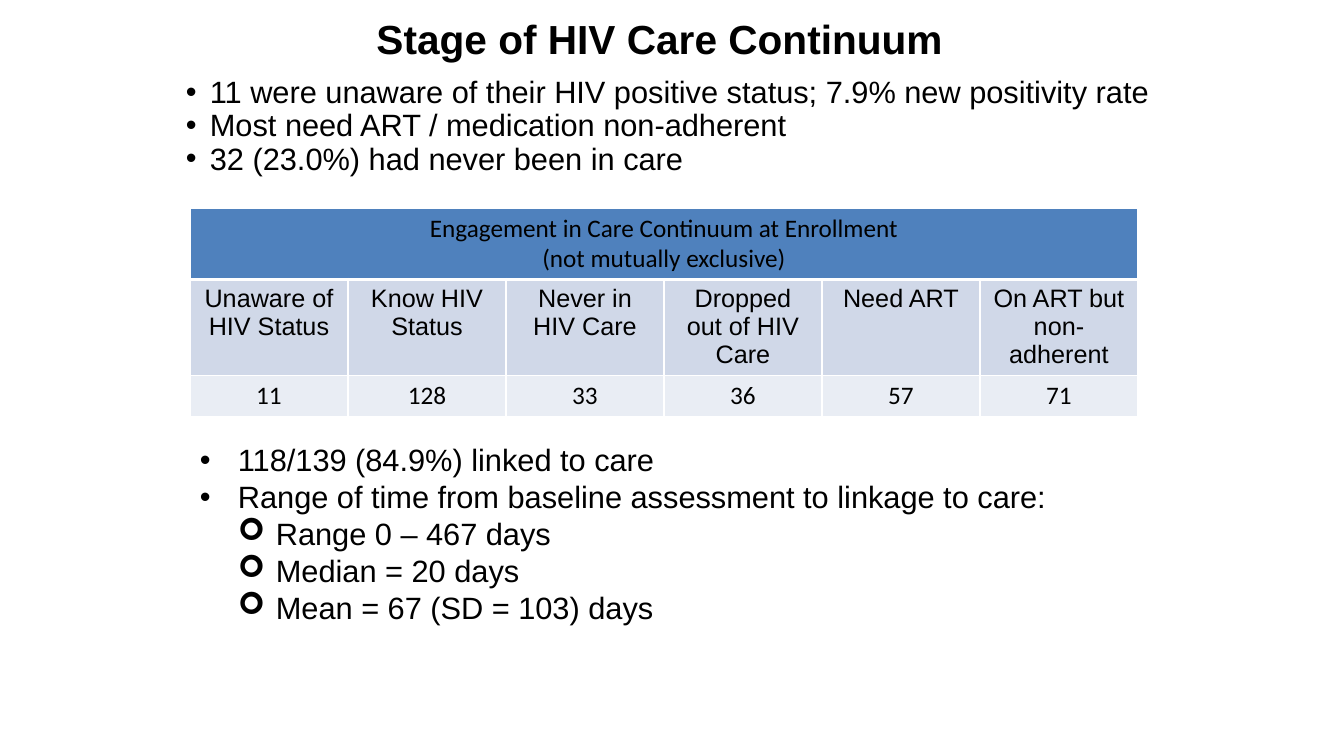
from lxml import etree
from pptx import Presentation
from pptx.dml.color import RGBColor
from pptx.enum.text import MSO_ANCHOR as Anchor, MSO_AUTO_SIZE as AutoSize, PP_ALIGN as Align
from pptx.oxml.ns import qn
from pptx.util import Pt

PX = 914400 / 100.8
BLACK = RGBColor(0x00, 0x00, 0x00)
WHITE = RGBColor(0xFF, 0xFF, 0xFF)
HEADER_BLUE = RGBColor(0x4F, 0x81, 0xBD)
LABEL_BLUE = RGBColor(0xD0, 0xD8, 0xE8)
COUNT_BLUE = RGBColor(0xE9, 0xED, 0xF4)

FINDINGS = [
    "11 were unaware of their HIV positive status; 7.9% new positivity rate",
    "Most need ART / medication non-adherent",
    "32 (23.0%) had never been in care",
]
LINKAGE = [
    "118/139 (84.9%) linked to care",
    "Range of time from baseline assessment to linkage to care:",
]
LINKAGE_TIMES = ["Range 0 – 467 days", "Median = 20 days", "Mean = 67 (SD = 103) days"]
TABLE_TITLE = ["Engagement in Care Continuum at Enrollment", "(not mutually exclusive)"]
STAGES = {
    "Unaware of HIV Status": 11,
    "Know HIV Status": 128,
    "Never in HIV Care": 33,
    "Dropped out of HIV Care": 36,
    "Need ART": 57,
    "On ART but non-adherent": 71,
}


def px(length):
    return round(length * PX)


def add_bullet(paragraph, symbol, font, indent, hang):
    props = paragraph._p.get_or_add_pPr()
    props.set("marL", str(px(indent)))
    props.set("indent", str(px(-hang)))
    etree.SubElement(props, qn("a:buFont")).set("typeface", font)
    etree.SubElement(props, qn("a:buChar")).set("char", symbol)


def write(frame, lines, size=22, font="Arial", bold=False, align=Align.LEFT,
          spacing=None, level=0, bullet=None):
    """Append lines to a frame, starting with its first paragraph if still empty."""
    for line in lines:
        first = frame.paragraphs[0]
        paragraph = frame.add_paragraph() if first.runs else first
        paragraph.level = level
        paragraph.alignment = align
        if spacing:
            paragraph.line_spacing = spacing
        if bullet:
            add_bullet(paragraph, *bullet)
        run = paragraph.add_run()
        run.text = line
        run.font.size = Pt(size)
        run.font.name = font
        run.font.bold = bold
        run.font.color.rgb = BLACK


def set_borders(cell, top=1, bottom=1):
    """Draw white cell borders; top and bottom widths are in points."""
    props = cell._tc.get_or_add_tcPr()
    widths = {"a:lnL": 1, "a:lnR": 1, "a:lnT": top, "a:lnB": bottom}
    for position, (tag, width) in enumerate(widths.items()):
        line = etree.Element(qn(tag), w=str(Pt(width)))
        fill = etree.SubElement(line, qn("a:solidFill"))
        etree.SubElement(fill, qn("a:srgbClr")).set("val", str(WHITE))
        props.insert(position, line)


class CareSlide:
    def __init__(self):
        self.deck = Presentation()
        self.deck.slide_width = px(1344)
        self.deck.slide_height = px(756)
        self.slide = self.deck.slides.add_slide(self.deck.slide_layouts[6])

    def text_area(self, left, top, width, height, anchor=Anchor.TOP):
        box = self.slide.shapes.add_textbox(px(left), px(top), px(width), px(height))
        frame = box.text_frame
        frame.word_wrap = True
        frame.auto_size = AutoSize.NONE
        frame.vertical_anchor = anchor
        return frame

    def stage_table(self, left, top, column_width, row_heights):
        columns = len(STAGES)
        table = self.slide.shapes.add_table(
            len(row_heights), columns, px(left), px(top),
            px(column_width * columns), px(sum(row_heights))).table
        table.first_row = table.horz_banding = False
        for column in table.columns:
            column.width = px(column_width)
        for row, height in zip(table.rows, row_heights):
            row.height = px(height)

        fills = [HEADER_BLUE, LABEL_BLUE, COUNT_BLUE]
        for row, fill in enumerate(fills):
            for column in range(columns):
                cell = table.cell(row, column)
                cell.fill.solid()
                cell.fill.fore_color.rgb = fill
                set_borders(cell, top=3 if row == 1 else 1, bottom=3 if row == 0 else 1)

        heading = table.cell(0, 0)
        heading.merge(table.cell(0, columns - 1))
        style = {"size": 18, "align": Align.CENTER}
        write(heading.text_frame, TABLE_TITLE, font="Calibri", **style)
        for column, (stage, count) in enumerate(STAGES.items()):
            write(table.cell(1, column).text_frame, [stage], **style)
            write(table.cell(2, column).text_frame, [str(count)], font="Calibri", **style)


def main():
    page = CareSlide()
    title = page.text_area(156, 11, 1008, 60, Anchor.MIDDLE)
    write(title, ["Stage of HIV Care Continuum"], size=29, bold=True,
          align=Align.CENTER, spacing=0.9)

    findings = page.text_area(150, 72, 1020, 605)
    write(findings, FINDINGS, spacing=0.9, level=1, bullet=("•", "Arial", 50, 24))

    page.stage_table(190, 208, 158, [70, 96, 40])

    linkage = page.text_area(190, 436, 950, 197)
    write(linkage, LINKAGE, bullet=("•", "Arial", 38, 38))
    write(linkage, LINKAGE_TIMES, level=1, bullet=("➢", "Wingdings", 76, 38))
    page.deck.save("out.pptx")


if __name__ == "__main__":
    main()
